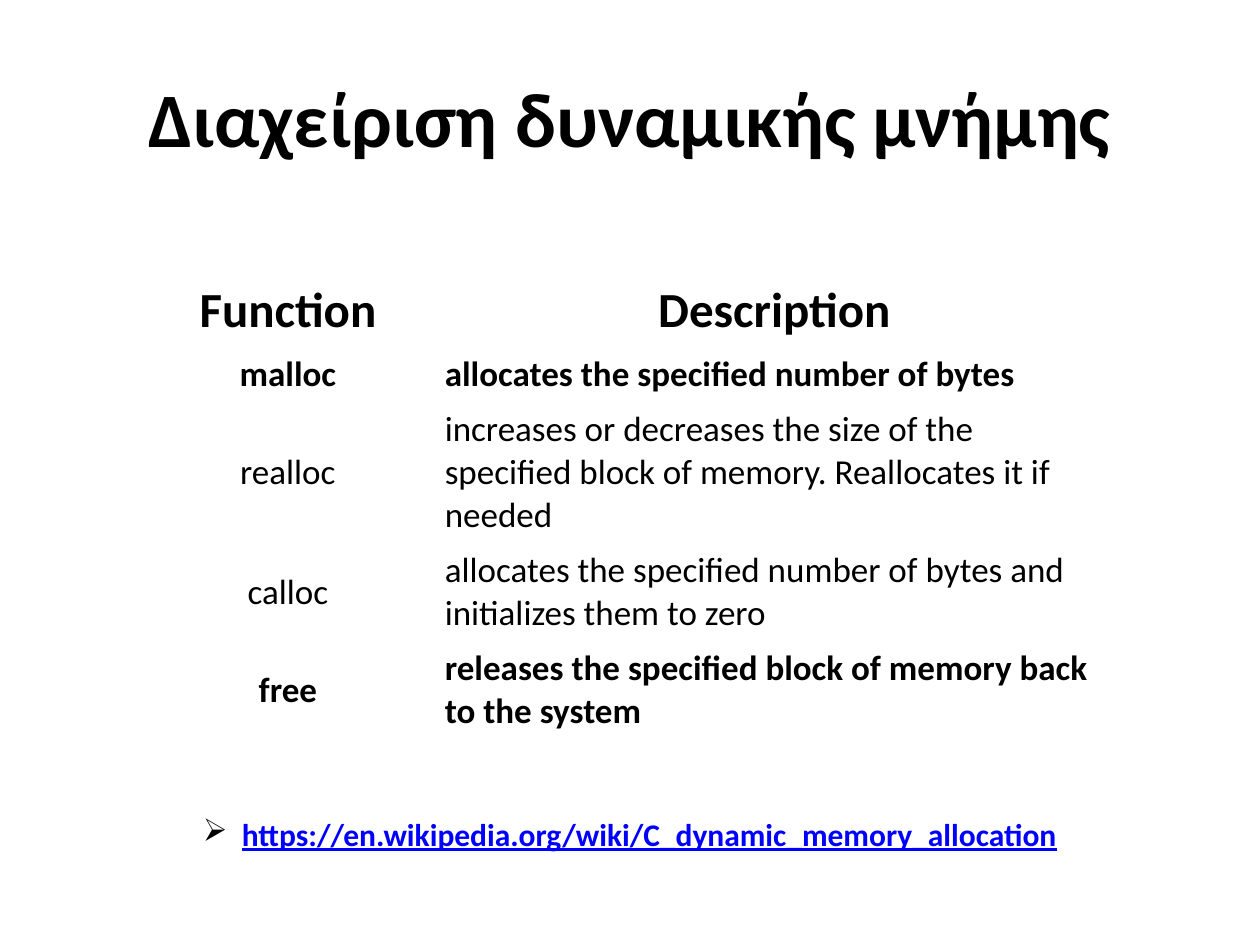
"""Build a slide on C dynamic memory functions with a table and a reference link."""
from dataclasses import dataclass

from lxml import etree
from pptx import Presentation
from pptx import util as u
from pptx.dml import color
from pptx.enum import text
from pptx.oxml import ns


@dataclass(frozen=True)
class Theme:
    font: str = "Calibri"
    ink: str = "000000"
    link: str = "0000FF"
    title: int = 44
    header: int = 28
    body: int = 20
    reference: int = 18


def style(para, size, ink, bold=True, underline=False):
    para.font.name = theme.font
    for span in para.runs:
        span.font.name = theme.font
        span.font.size = u.Pt(size)
        span.font.bold = bold
        span.font.underline = underline
        span.font.color.rgb = color.RGBColor.from_string(ink)


def add_line(page, left, top, width, height, words):
    box = page.shapes.add_textbox(u.Inches(left), u.Inches(top), u.Inches(width), u.Inches(height))
    box.text_frame.word_wrap = True
    box.text_frame.text = words
    para = box.text_frame.paragraphs[0]
    para.alignment = text.PP_ALIGN.CENTER
    return box, para


theme = Theme()
deck = Presentation()
deck.slide_width, deck.slide_height = u.Inches(10), u.Inches(7.5)
page = deck.slides.add_slide(deck.slide_layouts[6])

title, para = add_line(page, 0.5, 0.3, 9, 1.25, "Διαχείριση δυναμικής μνήμης")
title.text_frame.vertical_anchor = text.MSO_ANCHOR.MIDDLE
style(para, theme.title, theme.ink)

rows = [
    ("Function", "Description", 0.57, True),
    ("malloc", "allocates the specified number of bytes", 0.44, True),
    ("realloc", "increases or decreases the size of the specified block of memory. "
     "Reallocates it if needed", 1.12, False),
    ("calloc", "allocates the specified number of bytes and initializes them to zero", 0.78, False),
    ("free", "releases the specified block of memory back to the system", 0.78, True),
]
widths = [2.29, 5.43]
table_height = sum(height for _, _, height, _ in rows)
table = page.shapes.add_table(
    len(rows), len(widths), u.Inches(1.14), u.Inches(2.18),
    u.Inches(sum(widths)), u.Inches(table_height)).table
table.first_row = table.horz_banding = False
for column, width in zip(table.columns, widths):
    column.width = u.Inches(width)

for row_index, (function, description, height, bold) in enumerate(rows):
    table.rows[row_index].height = u.Inches(height)
    for column_index, words in enumerate((function, description)):
        cell = table.cell(row_index, column_index)
        cell.fill.background()
        cell.vertical_anchor = text.MSO_ANCHOR.MIDDLE
        cell.text_frame.text = words
        para = cell.text_frame.paragraphs[0]
        centred = row_index == 0 or column_index == 0
        para.alignment = text.PP_ALIGN.CENTER if centred else text.PP_ALIGN.LEFT
        style(para, theme.body if row_index else theme.header, theme.ink, bold)

reference, para = add_line(
    page, 0.59, 6.42, 8.82, 0.4, "https://en.wikipedia.org/wiki/C_dynamic_memory_allocation")
reference.text_frame.auto_size = text.MSO_AUTO_SIZE.SHAPE_TO_FIT_TEXT
properties = para._p.get_or_add_pPr()
properties.set("marL", str(u.Inches(0.31)))
properties.set("indent", str(u.Inches(-0.31)))
bullet_color = etree.SubElement(properties, ns.qn("a:buClr"))
etree.SubElement(bullet_color, ns.qn("a:srgbClr"), val=theme.ink)
etree.SubElement(properties, ns.qn("a:buChar"), char="➢")
style(para, theme.reference, theme.link, underline=True)

deck.save("out.pptx")
